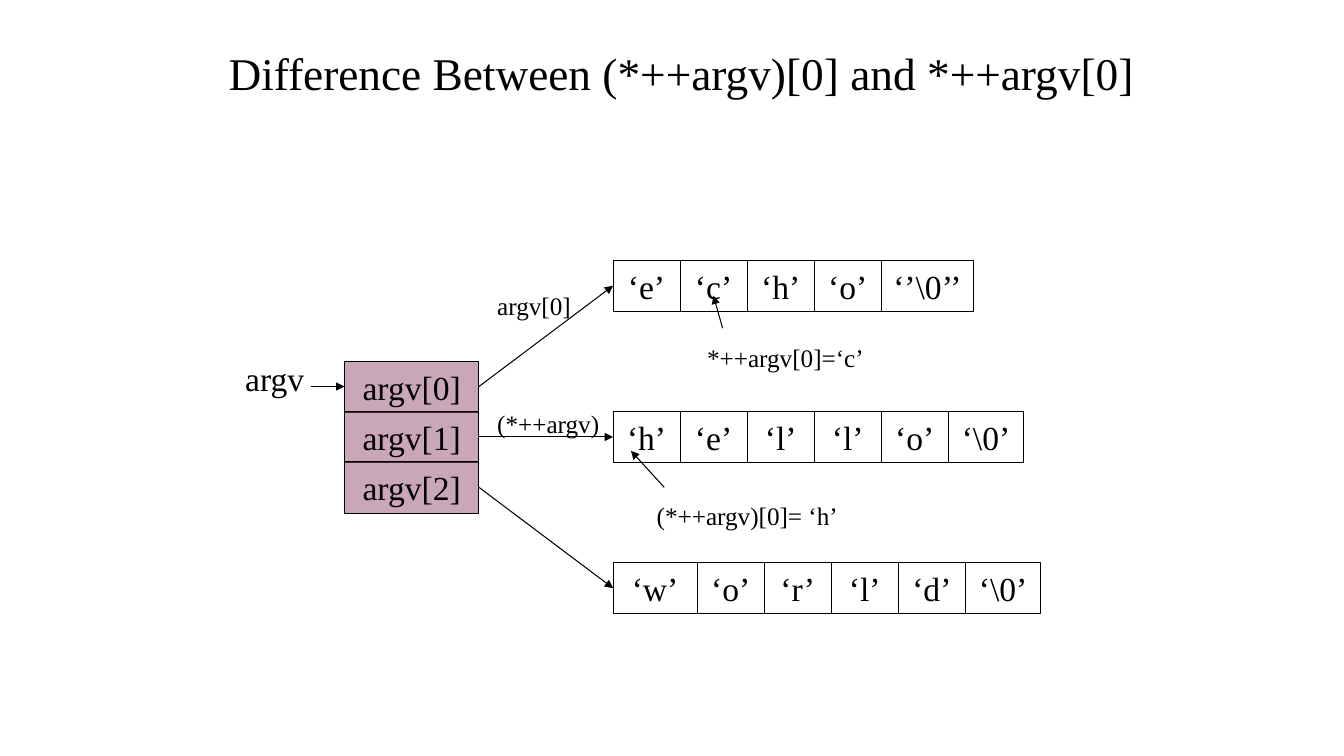
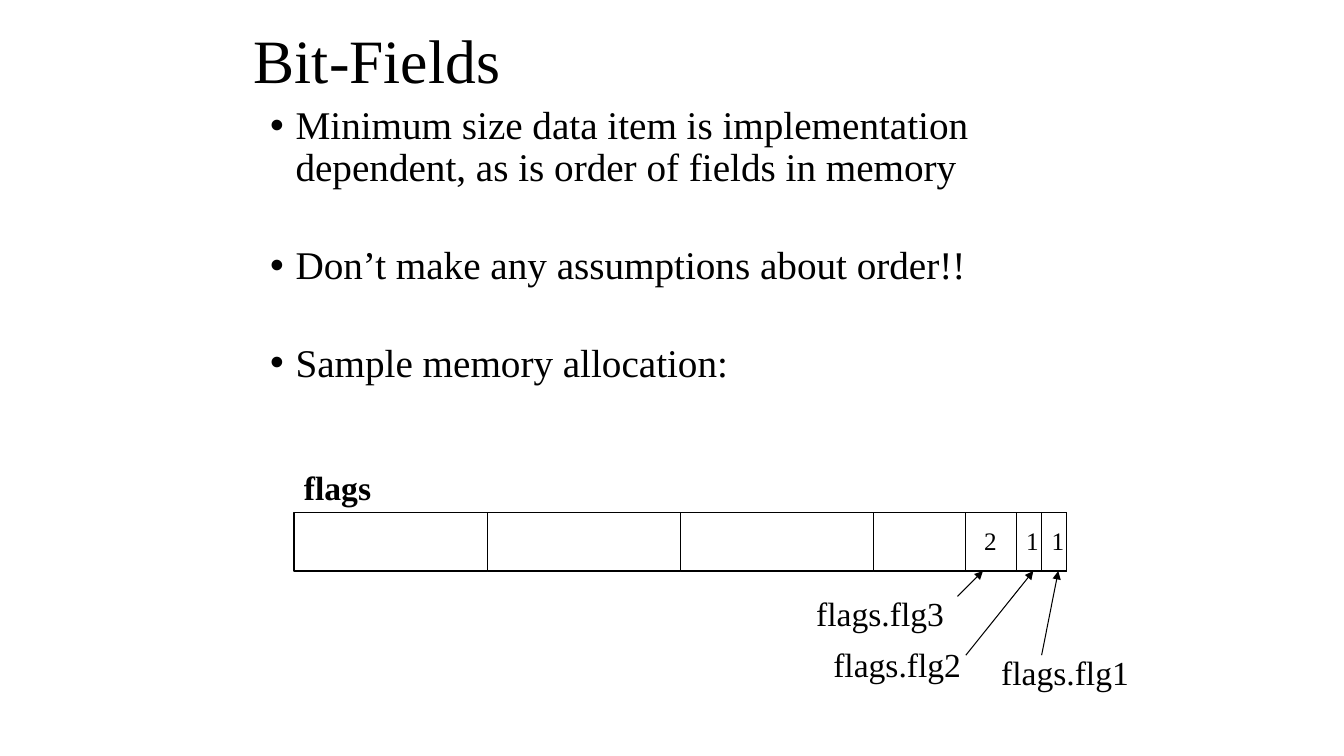
from dataclasses import dataclass
from itertools import accumulate

from lxml import etree
from pptx import Presentation
from pptx import util as u
from pptx.dml import color
from pptx.enum import shapes, text
from pptx.oxml import ns

BLACK = color.RGBColor(0x00, 0x00, 0x00)
PLUM = color.RGBColor(0x95, 0x4F, 0x72)
FONT = "Times New Roman"
LINE_WIDTH = u.Pt(0.75)
LINE_SPACING = 0.9

CELL_WIDTH, CELL_HEIGHT = 1.69, 1.29
CELL_MIDDLE = 0.64
POINTER_LEFT, POINTER_TOP = 8.68, 9.1
POINTER_WIDTH, POINTER_PITCH = 3.39, 1.27
STRING_LEFT, STRING_TOP, STRING_PITCH = 15.45, 6.56, 3.81

BYTE_LEFT, BYTE_TOP = 7.41, 12.91
BYTE_WIDTH, BYTE_HEIGHT = 4.87, 1.48
FLAG_WIDTH = 0.64


@dataclass(frozen=True)
class Box:
    left: float
    top: float
    width: float
    height: float

    def lengths(self) -> tuple:
        return u.Cm(self.left), u.Cm(self.top), u.Cm(self.width), u.Cm(self.height)


@dataclass(frozen=True)
class Label:
    wording: str
    box: Box
    size: float = 24
    bold: bool = False


@dataclass(frozen=True)
class Arrow:
    start: tuple[float, float]
    end: tuple[float, float]


@dataclass(frozen=True)
class StringRow:
    characters: tuple[str, ...]
    first_width: float = CELL_WIDTH
    last_width: float = 1.9

    def widths(self) -> list[float]:
        inner = [CELL_WIDTH] * (len(self.characters) - 2)
        return [self.first_width, *inner, self.last_width]


STRINGS = (
    StringRow(("‘e’", "‘c’", "‘h’", "‘o’", "‘’\\0’’"), last_width=2.33),
    StringRow(("‘h’", "‘e’", "‘l’", "‘l’", "‘o’", "‘\\0’")),
    StringRow(("‘w’", "‘o’", "‘r’", "‘l’", "‘d’", "‘\\0’"), first_width=2.12),
)
ARGUMENT_LABELS = (
    Label("argv", Box(5.93, 8.89, 2.01, 1.27)),
    Label("(*++argv)", Box(12.28, 10.16, 3.1, 1.02), 18),
    Label("(*++argv)[0]= ‘h’", Box(16.3, 12.49, 5.1, 1.02), 18),
    Label("argv[0]", Box(12.28, 7.2, 2.39, 1.02), 18),
    Label("*++argv[0]=‘c’", Box(17.57, 8.51, 4.47, 1.02), 18),
)
ARGUMENT_ARROWS = (
    Arrow((7.83, 9.74), (POINTER_LEFT, 9.74)),
    Arrow((16.74, 12.28), (15.9, 11.36)),
    Arrow((18.21, 8.27), (17.98, 7.45)),
)
BULLETS = (
    "Minimum size data item is implementation dependent, as is order of fields in memory",
    "Don’t make any assumptions about order!!",
    "Sample memory allocation:",
)
FLAG_LABELS = (
    Label("flags", Box(7.41, 11.64, 2.2, 1.27), bold=True),
    Label("flags.flg1", Box(24.98, 16.3, 3.73, 1.27)),
    Label("flags.flg2", Box(20.75, 16.09, 3.73, 1.27)),
    Label("flags.flg3", Box(20.32, 14.82, 3.73, 1.27)),
    Label("1", Box(26.25, 13.12, 0.85, 1.02), 18),
    Label("1", Box(25.61, 13.12, 0.85, 1.02), 18),
    Label("2", Box(24.55, 13.12, 0.85, 1.02), 18),
)
FLAG_ARROWS = (
    Arrow((26.25, 16.51), (26.67, 14.39)),
    Arrow((24.34, 16.51), (26.04, 14.39)),
    Arrow((24.13, 15.03), (24.77, 14.39)),
)


def format_runs(paragraph, size: float, bold: bool = False) -> None:
    for run in paragraph.runs:
        run.font.name = FONT
        run.font.size = u.Pt(size)
        run.font.bold = bold
        run.font.color.rgb = BLACK


def add_title(slide, label: Label) -> None:
    frame = slide.shapes.add_textbox(*label.box.lengths()).text_frame
    frame.word_wrap = True
    frame.vertical_anchor = text.MSO_ANCHOR.MIDDLE
    frame.text = label.wording
    frame.paragraphs[0].line_spacing = LINE_SPACING
    format_runs(frame.paragraphs[0], label.size)


def add_label(slide, label: Label) -> None:
    frame = slide.shapes.add_textbox(*label.box.lengths()).text_frame
    frame.word_wrap = False
    frame.auto_size = text.MSO_AUTO_SIZE.SHAPE_TO_FIT_TEXT
    frame.text = label.wording
    format_runs(frame.paragraphs[0], label.size, label.bold)


def add_cell(container, box: Box, wording: str = "", shaded: bool = False) -> None:
    shape = container.shapes.add_shape(shapes.MSO_SHAPE.RECTANGLE, *box.lengths())
    shape.shadow.inherit = False
    shape.line.color.rgb = BLACK
    shape.line.width = LINE_WIDTH
    if shaded:
        shape.fill.solid()
        shape.fill.fore_color.rgb = PLUM
        tint = shape.fill._xPr.find(ns.qn("a:solidFill"))[0]
        etree.SubElement(tint, ns.qn("a:alpha"), val="50000")
    else:
        shape.fill.background()
    if wording:
        frame = shape.text_frame
        frame.word_wrap = False
        frame.text = wording
        frame.paragraphs[0].alignment = text.PP_ALIGN.CENTER
        format_runs(frame.paragraphs[0], 24)


def add_arrow(slide, arrow: Arrow) -> None:
    points = [u.Cm(value) for value in (*arrow.start, *arrow.end)]
    connector = slide.shapes.add_connector(shapes.MSO_CONNECTOR.STRAIGHT, *points)
    connector.line.color.rgb = BLACK
    connector.line.width = LINE_WIDTH
    line = connector.line._get_or_add_ln()
    etree.SubElement(line, ns.qn("a:tailEnd"), type="triangle")
    etree.SubElement(connector._element.spPr, ns.qn("a:effectLst"))


def add_bullets(slide, box: Box, wordings: tuple[str, ...]) -> None:
    frame = slide.shapes.add_textbox(*box.lengths()).text_frame
    frame.word_wrap = True
    for index, wording in enumerate(wordings):
        paragraph = frame.add_paragraph() if index else frame.paragraphs[0]
        paragraph.text = wording
        paragraph.line_spacing = LINE_SPACING
        paragraph.space_before = u.Pt(39.5 if index else 0)
        format_runs(paragraph, 28)
        properties = paragraph._p.get_or_add_pPr()
        indent = u.Cm(0.64)
        properties.set("marL", str(indent))
        properties.set("indent", str(-indent))
        etree.SubElement(properties, ns.qn("a:buFont"), typeface="Arial")
        etree.SubElement(properties, ns.qn("a:buChar"), char="•")


def add_notes(slide, labels: tuple[Label, ...], arrows: tuple[Arrow, ...]) -> None:
    for label in labels:
        add_label(slide, label)
    for arrow in arrows:
        add_arrow(slide, arrow)


def add_string(slide, row: StringRow, top: float) -> None:
    group = slide.shapes.add_group_shape()
    widths = row.widths()
    lefts = accumulate(widths[:-1], initial=STRING_LEFT)
    for character, left, width in zip(row.characters, lefts, widths):
        add_cell(group, Box(left, top, width, CELL_HEIGHT), character)


def build_argument_slide(slide) -> None:
    title = "Difference Between (*++argv)[0] and *++argv[0]"
    add_title(slide, Label(title, Box(5.51, 0.64, 24.13, 2.54), 32.4))
    for index, row in enumerate(STRINGS):
        pointer_top = POINTER_TOP + index * POINTER_PITCH
        string_top = STRING_TOP + index * STRING_PITCH
        pointer = Box(POINTER_LEFT, pointer_top, POINTER_WIDTH, CELL_HEIGHT)
        add_cell(slide, pointer, f"argv[{index}]", shaded=True)
        add_string(slide, row, string_top)
        start = (POINTER_LEFT + POINTER_WIDTH, pointer_top + CELL_MIDDLE)
        add_arrow(slide, Arrow(start, (STRING_LEFT, string_top + CELL_MIDDLE)))
    add_notes(slide, ARGUMENT_LABELS, ARGUMENT_ARROWS)


def build_bit_field_slide(slide) -> None:
    add_title(slide, Label("Bit-Fields", Box(6.15, 0, 21.59, 3.18), 44))
    add_bullets(slide, Box(6.56, 2.54, 21.79, 11.43), BULLETS)
    for index in range(4):
        left = BYTE_LEFT + index * BYTE_WIDTH
        add_cell(slide, Box(left, BYTE_TOP, BYTE_WIDTH, BYTE_HEIGHT))
    left = BYTE_LEFT + 4 * BYTE_WIDTH
    for bits in (1, 1, 2):
        left -= bits * FLAG_WIDTH
        add_cell(slide, Box(left, BYTE_TOP, bits * FLAG_WIDTH, BYTE_HEIGHT))
    add_notes(slide, FLAG_LABELS, FLAG_ARROWS)


def main() -> None:
    presentation = Presentation()
    presentation.slide_width = u.Cm(33.87)
    presentation.slide_height = u.Cm(19.05)
    blank = presentation.slide_layouts[6]
    for build in (build_argument_slide, build_bit_field_slide):
        build(presentation.slides.add_slide(blank))
    presentation.save("out.pptx")


if __name__ == "__main__":
    main()
